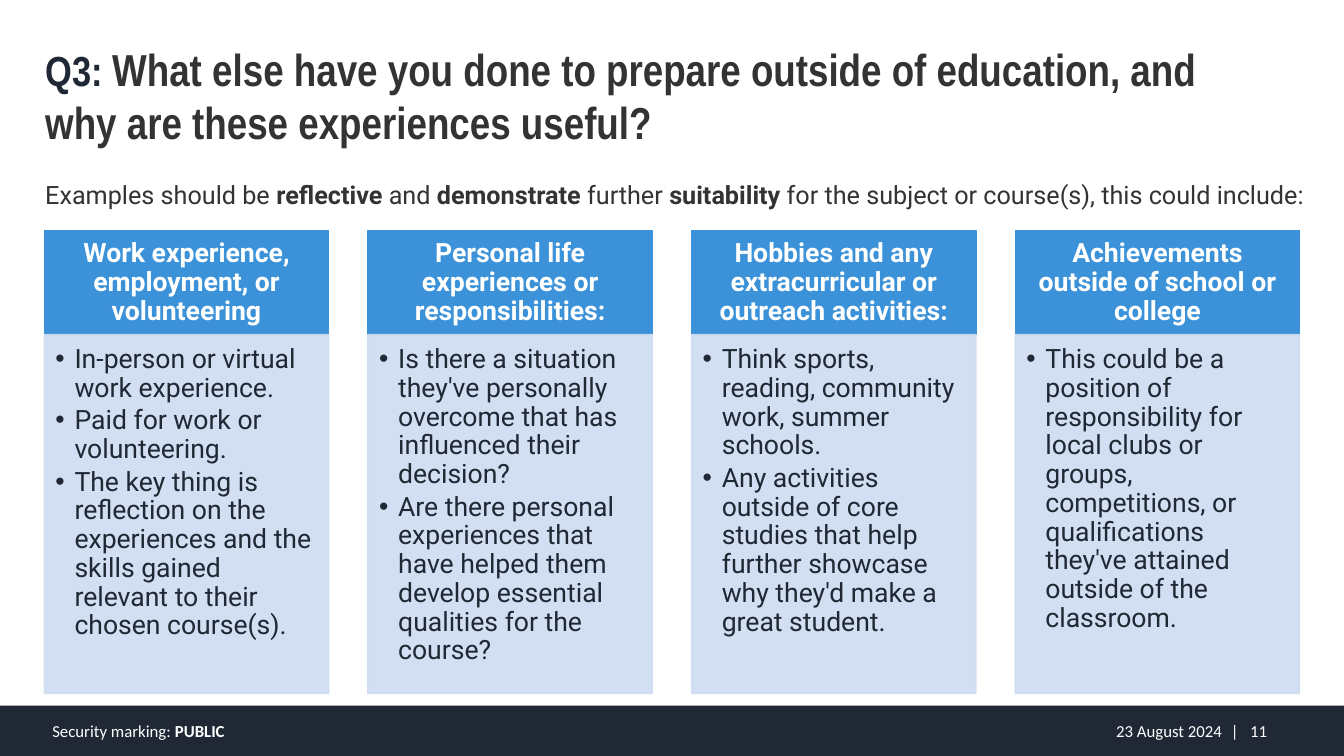
from dataclasses import dataclass

from lxml.etree import SubElement
from pptx import Presentation
from pptx.dml.color import RGBColor
from pptx.enum.shapes import MSO_SHAPE as Preset
from pptx.enum.text import MSO_ANCHOR as Anchor, PP_ALIGN as Align
from pptx.oxml.ns import qn
from pptx.util import Inches, Pt


@dataclass(frozen=True)
class Theme:
    navy: str = "1F2834"
    grey: str = "333333"
    blue: str = "3B92D9"
    pale: str = "CEDCF1"
    white: str = "FFFFFF"
    title_font: str = "Arial Narrow"
    body_font: str = "Roboto"
    footer_font: str = "Calibri"
    lead_size: int = 30
    title_size: int = 32
    intro_size: int = 18
    card_size: int = 19
    footer_size: int = 12


THEME = Theme()
WIDTH, HEIGHT = Inches(13.33), Inches(7.5)

# Card grid, in percent of the slide
CARD_LEFT, CARD_STEP, CARD_WIDTH = 3.3, 24.08, 21.16
HEADER_TOP, HEADER_HEIGHT = 30.53, 13.73
BODY_TOP, BODY_HEIGHT = 44.27, 47.47

CARDS = [
    ("Work experience, employment, or volunteering",
     ["In-person or virtual work experience.",
      "Paid for work or volunteering.",
      "The key thing is reflection on the experiences and the skills gained "
      "relevant to their chosen course(s)."]),
    ("Personal life experiences or responsibilities:",
     ["Is there a situation they've personally overcome that has influenced "
      "their decision?",
      "Are there personal experiences that have helped them develop essential "
      "qualities for the course?"]),
    ("Hobbies and any extracurricular or outreach activities:",
     ["Think sports, reading, community work, summer schools.",
      "Any activities outside of core studies that help further showcase why "
      "they'd make a great student."]),
    ("Achievements outside of school or college",
     ["This could be a position of responsibility for local clubs or groups, "
      "competitions, or qualifications they've attained outside of the "
      "classroom."]),
]


def place(left, top, width, height):
    """Turn percentages of the slide into lengths."""
    return (int(WIDTH * left / 100), int(HEIGHT * top / 100),
            int(WIDTH * width / 100), int(HEIGHT * height / 100))


def style(span, font, size, color, bold=False):
    span.font.name = font
    span.font.size = Pt(size)
    span.font.bold = bold
    span.font.color.rgb = RGBColor.from_string(color)


def set_frame(frame, anchor, insets):
    frame.word_wrap = True
    frame.vertical_anchor = anchor
    (frame.margin_left, frame.margin_top,
     frame.margin_right, frame.margin_bottom) = map(Inches, insets)


def add_panel(page, area, color, opacity=100):
    """Add a plain rectangle with a matching outline."""
    panel = page.shapes.add_shape(Preset.RECTANGLE, *place(*area))
    panel.shadow.inherit = False
    panel.line.width = Pt(1)
    for fill in (panel.fill, panel.line.fill):
        fill.solid()
        fill.fore_color.rgb = RGBColor.from_string(color)
    if opacity < 100:
        for tint in panel._element.spPr.iter(qn("a:srgbClr")):
            SubElement(tint, qn("a:alpha"), val=str(opacity * 1000))
    return panel


def add_text(page, area, spans, font, anchor=Anchor.TOP, align=Align.LEFT,
             insets=(0.1, 0.05, 0.1, 0.05)):
    """Add one paragraph; each span is (text, size, color, bold)."""
    box = page.shapes.add_textbox(*place(*area))
    set_frame(box.text_frame, anchor, insets)
    para = box.text_frame.paragraphs[0]
    para.alignment = align
    for text, size, color, bold in spans:
        span = para.add_run()
        span.text = text
        style(span, font, size, color, bold)
    return para


def add_bullet(para):
    properties = para._p.get_or_add_pPr()
    properties.set("marL", str(Inches(0.19)))
    properties.set("indent", str(-Inches(0.19)))
    SubElement(properties, qn("a:buFont"), typeface="Arial")
    SubElement(properties, qn("a:buChar"), char="•")


def add_tab_stop(para, position):
    stops = SubElement(para._p.get_or_add_pPr(), qn("a:tabLst"))
    SubElement(stops, qn("a:tab"), pos=str(Inches(position)), algn="l")


def add_card(page, column, heading, points):
    left = CARD_LEFT + column * CARD_STEP
    # Heading band
    band = add_panel(page, (left, HEADER_TOP, CARD_WIDTH, HEADER_HEIGHT),
                     THEME.blue)
    set_frame(band.text_frame, Anchor.MIDDLE, (0.15, 0.08, 0.15, 0.08))
    band.text_frame.text = heading
    para = band.text_frame.paragraphs[0]
    para.alignment = Align.CENTER
    para.line_spacing = 0.9
    style(para.runs[0], THEME.body_font, THEME.card_size, THEME.white, True)
    # Bulleted body
    body = add_panel(page, (left, BODY_TOP, CARD_WIDTH, BODY_HEIGHT),
                     THEME.pale, opacity=90)
    set_frame(body.text_frame, Anchor.TOP, (0.11, 0.11, 0.15, 0.17))
    body.text_frame.text = "\n".join(points)
    for para in body.text_frame.paragraphs:
        add_bullet(para)
        para.alignment = Align.LEFT
        para.line_spacing = 0.9
        para.space_after = Pt(2.7)
        style(para.runs[0], THEME.body_font, THEME.card_size, THEME.navy)


def add_footer(page):
    add_panel(page, (0, 93.33, 100, 6.67), THEME.navy).line.fill.background()

    def label(left, width, *parts, **options):
        spans = [(text, THEME.footer_size, THEME.white, bold)
                 for text, bold in parts]
        return add_text(page, (left, 94.53, width, 4.4), spans,
                        THEME.footer_font, Anchor.MIDDLE, **options)

    label(65.27, 25.66, ("23 August 2024", False), align=Align.RIGHT,
          insets=(0.1, 0.05, 0, 0.05))
    number = label(90.85, 6, ("|\t11", False))
    add_tab_stop(number, 0.19)
    label(3.15, 52.21, ("Security marking: ", False), ("PUBLIC", True))


def main():
    deck = Presentation()
    deck.slide_width, deck.slide_height = WIDTH, HEIGHT
    page = deck.slides.add_slide(deck.slide_layouts[6])

    add_footer(page)

    # Introduction, with every second part in bold
    intro = ["Examples should be ", "reflective", " and ", "demonstrate",
             " further ", "suitability",
             " for the subject or course(s), this could include:"]
    add_text(page, (2.63, 23.07, 95.8, 5.33),
             [(text, THEME.intro_size, THEME.grey, index % 2 == 1)
              for index, text in enumerate(intro)], THEME.body_font)

    # Title
    add_text(page, (2.63, 4.8, 89.65, 15.73),
             [("Q3: ", THEME.lead_size, THEME.navy, True),
              ("What else have you done to prepare outside of education, and "
               "why are these experiences useful?",
               THEME.title_size, THEME.grey, True)], THEME.title_font)

    # Four cards
    for column, (heading, points) in enumerate(CARDS):
        add_card(page, column, heading, points)

    deck.save("out.pptx")


if __name__ == "__main__":
    main()
